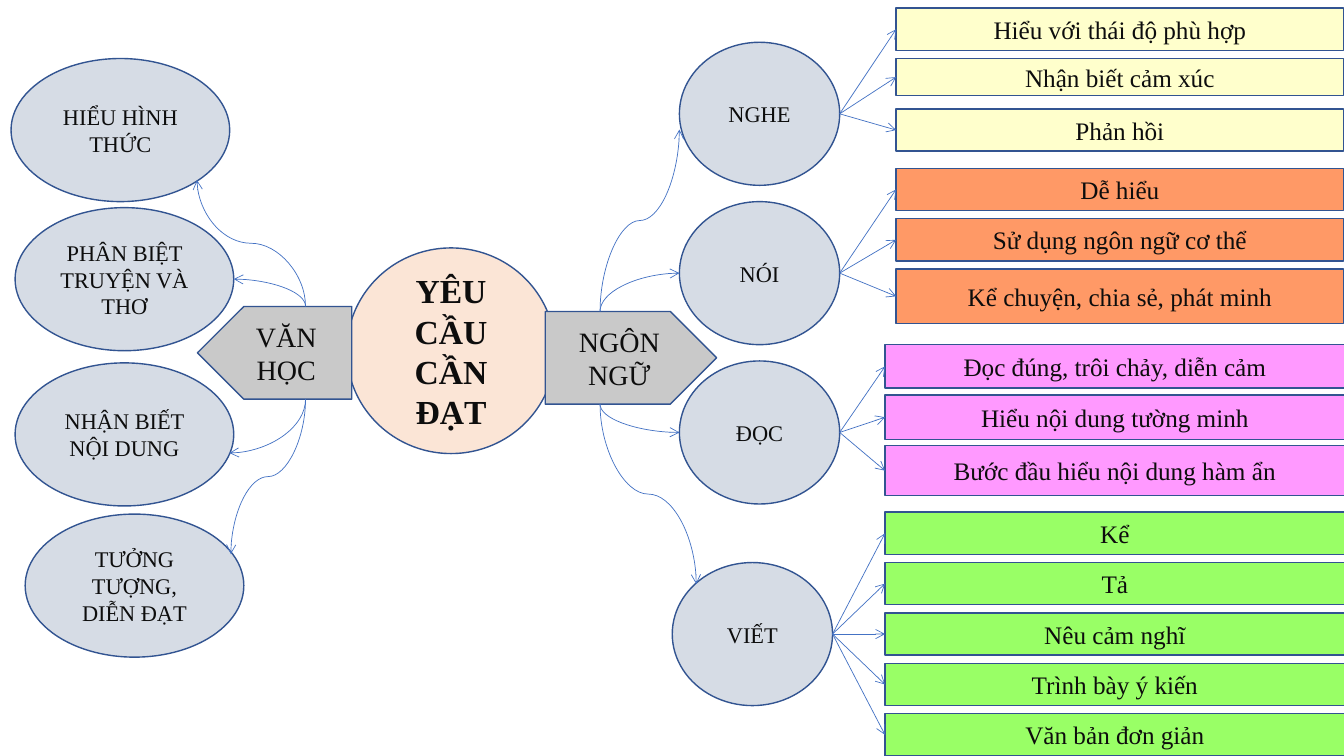
from dataclasses import dataclass

from lxml import etree
from pptx import Presentation
from pptx.dml.color import RGBColor
from pptx.enum.shapes import MSO_CONNECTOR, MSO_SHAPE
from pptx.enum.text import MSO_ANCHOR, PP_ALIGN
from pptx.oxml.ns import qn
from pptx.util import Pt

OVAL, RECT, TAG = MSO_SHAPE.OVAL, MSO_SHAPE.RECTANGLE, MSO_SHAPE.PENTAGON
STRAIGHT, CURVE = MSO_CONNECTOR.STRAIGHT, MSO_CONNECTOR.CURVE
CENTER, MIDDLE = PP_ALIGN.CENTER, MSO_ANCHOR.MIDDLE


@dataclass(frozen=True)
class Theme:
    font: str = "Times New Roman"
    ink: str = "0D0D0D"
    edge: str = "325491"
    wire: str = "4472C4"
    core: str = "FBE5D6"
    tag: str = "C9C9C9"
    oval: str = "D6DCE5"
    cream: str = "FFFFCC"
    orange: str = "FF9966"
    pink: str = "FF99FF"
    green: str = "99FF66"
    core_size: int = 24
    tag_size: int = 20
    oval_size: int = 16
    item_size: int = 18
    edge_width: float = 1
    wire_width: float = 0.5


THEME = Theme()
OVAL_HIGH = 102.2
STEP = 36

# Ovals: text, left, top, then where the curve lands as shares of the oval's
# box, and whether the curve is S-shaped.
LEFT_OVALS = [
    ("HIỂU HÌNH THỨC", 7.9, 41.8, 0.85, 0.85, True),
    ("PHÂN BIỆT TRUYỆN VÀ THƠ", 10.8, 148.3, 1, 0.5, False),
    ("NHẬN BIẾT NỘI DUNG", 10.8, 259.2, 0.98, 0.63, False),
    ("TƯỞNG TƯỢNG, DIỄN ĐẠT", 18, 367.2, 0.94, 0.28, True),
]
RIGHT_OVALS = [
    ("NGHE", 485.3, 30.2, 0, 0.61, True),
    ("NÓI", 485.3, 144, 0, 0.5, False),
    ("ĐỌC", 485.3, 257.8, 0, 0.5, False),
    ("VIẾT", 480.2, 401.8, 0.15, 0.15, True),
]

# Lists: left, top, width, fill, then each item with its height.
LISTS = [
    (640.1, 5.8, 319.7, THEME.cream, [
        ("Hiểu với thái độ phù hợp", 30.2),
        ("Nhận biết cảm xúc", 26.6),
        ("Phản hồi", 30.2)]),
    (640.1, 120.2, 319.7, THEME.orange, [
        ("Dễ hiểu", 30.2),
        ("Sử dụng ngôn ngữ cơ thể", 30.2),
        ("Kể chuyện, chia sẻ, phát minh", 38.9)]),
    (632.2, 246.2, 328.3, THEME.pink, [
        ("Đọc đúng, trôi chảy, diễn cảm", 31),
        ("Hiểu nội dung tường minh", 31.7),
        ("Bước đầu hiểu nội dung hàm ẩn", 36)]),
    (632.2, 365.8, 328.3, THEME.green, [
        ("Kể", 30.2),
        ("Tả", 30.2),
        ("Nêu cảm nghĩ", 30.2),
        ("Trình bày ý kiến", 30.2),
        ("Văn bản đơn giản", 30.2)]),
]


def color(code):
    return RGBColor.from_string(code)


def add_node(slide, kind, box, text, fill, size, bold=False):
    """Add a filled, outlined shape with centred text."""
    node = slide.shapes.add_shape(kind, *map(Pt, box))
    node.shadow.inherit = False
    node.fill.solid()
    node.fill.fore_color.rgb = color(fill)
    node.line.color.rgb = color(THEME.edge)
    node.line.width = Pt(THEME.edge_width)
    frame = node.text_frame
    frame.word_wrap = True
    frame.vertical_anchor = MIDDLE
    frame.text = text
    para = frame.paragraphs[0]
    para.alignment = CENTER
    font = para.runs[0].font
    font.name = THEME.font
    font.size = Pt(size)
    font.bold = bold
    font.color.rgb = color(THEME.ink)
    return node


def add_wire(slide, kind, start, end):
    """Add a thin connector with an open arrowhead at its end."""
    wire = slide.shapes.add_connector(kind, *map(Pt, start + end))
    wire.line.color.rgb = color(THEME.wire)
    wire.line.width = Pt(THEME.wire_width)
    etree.SubElement(wire.line._get_or_add_ln(), qn("a:tailEnd"), type="arrow")
    etree.SubElement(wire._element.spPr, qn("a:effectLst"))
    return wire


def add_curve(slide, start, end, bent):
    """Add a curve that leaves vertically: S-shaped if bent, else an arc."""
    (x1, y1), (x2, y2) = start, end
    mid_x, mid_y = (x1 + x2) / 2, (y1 + y2) / 2
    # The turned connector swaps its width and height about the midpoint.
    up, right = y2 < y1, x2 > x1
    turn = 90 if up == right else 270
    sign = 1 if turn == 90 else -1
    half_w, half_h = sign * (y2 - y1) / 2, sign * (x1 - x2) / 2
    wire = add_wire(slide, CURVE, (mid_x - half_w, mid_y - half_h),
                    (mid_x + half_w, mid_y + half_h))
    props = wire._element.spPr
    props.find(qn("a:xfrm")).set("rot", str(turn * 60000))
    shape = "curvedConnector3" if bent else "curvedConnector2"
    props.find(qn("a:prstGeom")).set("prst", shape)


def add_wing(slide, box, text, root, ovals, width, flip=False):
    """Add a tag, its ovals and the curves that leave it at share root."""
    left, top, wide, high = box
    tag = add_node(slide, TAG, box, text, THEME.tag, THEME.tag_size)
    if flip:
        tag._element.spPr.find(qn("a:xfrm")).set("flipH", "1")
    for name, x, y, across, down, bent in ovals:
        add_node(slide, OVAL, (x, y, width, OVAL_HIGH), name,
                 THEME.oval, THEME.oval_size)
        end = (x + across * width, y + down * OVAL_HIGH)
        edge = top if end[1] < top + high / 2 else top + high
        add_curve(slide, (left + root * wide, edge), end, bent)


def add_list(slide, left, top, width, fill, items, start):
    """Add a column of items, each reached by an arrow from start."""
    for row, (text, high) in enumerate(items):
        box = (left, top + row * STEP, width, high)
        item = add_node(slide, RECT, box, text, fill, THEME.item_size)
        wire = add_wire(slide, STRAIGHT, start, (left, box[1] + high / 2))
        wire.end_connect(item, 1)


def main():
    deck = Presentation()
    deck.slide_width, deck.slide_height = Pt(960), Pt(540)
    slide = deck.slides.add_slide(deck.slide_layouts[6])
    add_node(slide, OVAL, (247.7, 177.1, 149, 146.9), "YÊU CẦU CẦN ĐẠT",
             THEME.core, THEME.core_size, bold=True)
    add_wing(slide, (389.5, 222.5, 122.4, 66.2), "NGÔN NGỮ", 0.32,
             RIGHT_OVALS, 114.5)
    add_wing(slide, (141.1, 218.9, 110.2, 66.2), "VĂN HỌC", 0.7,
             LEFT_OVALS, 156.2, flip=True)
    for oval, group in zip(RIGHT_OVALS, LISTS):
        start = (oval[1] + 114.5, oval[2] + OVAL_HIGH / 2)
        add_list(slide, *group, start)
    deck.save("out.pptx")


if __name__ == "__main__":
    main()
